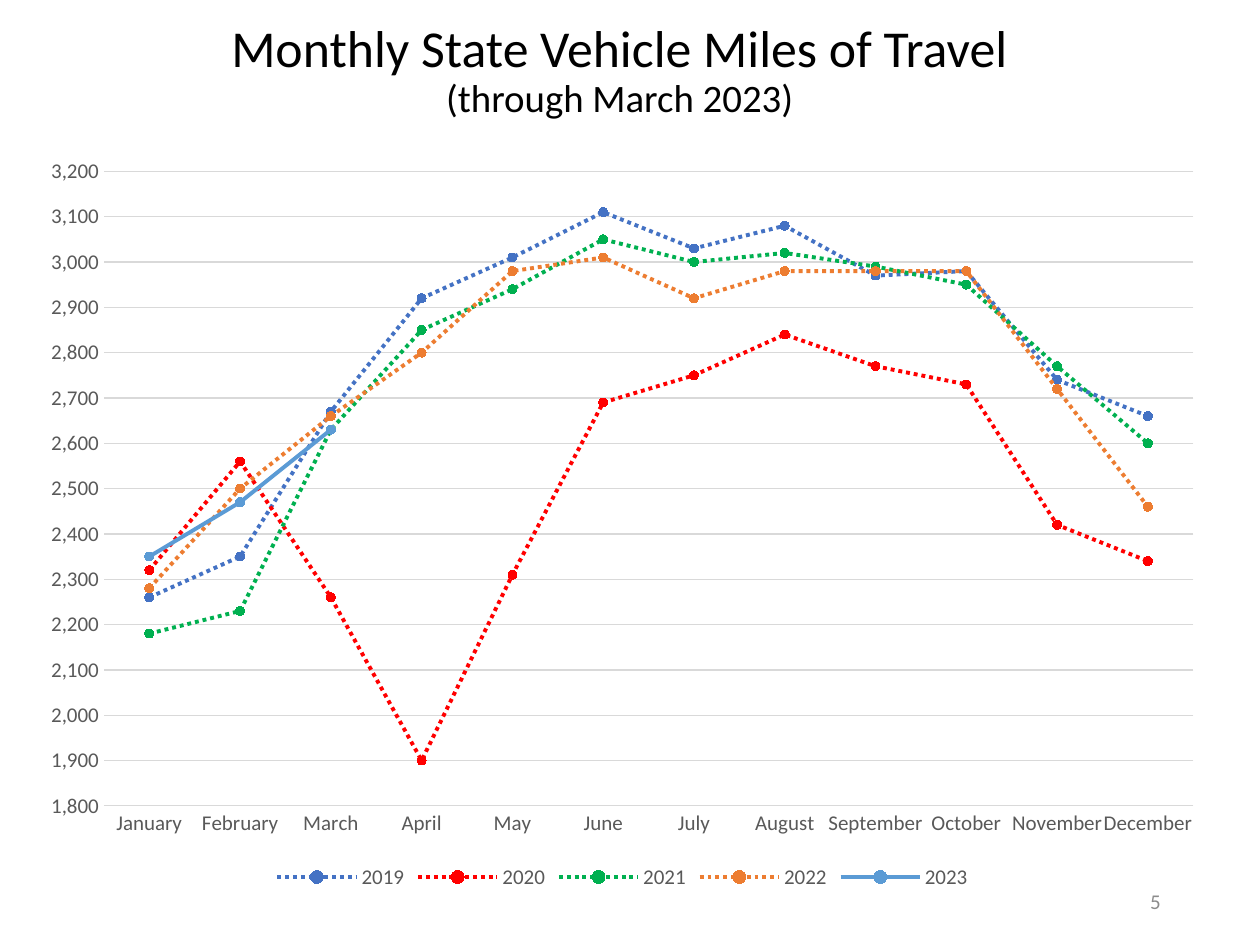
from lxml import etree
from pptx import Presentation
from pptx import util as u
from pptx.chart.data import CategoryChartData
from pptx.dml.color import RGBColor
from pptx.enum import chart as ch, dml, text
from pptx.oxml.ns import qn

FONT = "Calibri"
BLACK = RGBColor(0x00, 0x00, 0x00)
LABEL_GRAY = RGBColor(0x59, 0x59, 0x59)
GRID_GRAY = RGBColor(0xD9, 0xD9, 0xD9)
NUMBER_GRAY = RGBColor(0x8C, 0x8C, 0x8C)
BLUE = RGBColor(0x44, 0x72, 0xC4)
RED = RGBColor(0xFF, 0x00, 0x00)
GREEN = RGBColor(0x00, 0xB0, 0x50)
ORANGE = RGBColor(0xED, 0x7D, 0x31)
LIGHT_BLUE = RGBColor(0x5B, 0x9B, 0xD5)

MONTHS = ["January", "February", "March", "April", "May", "June", "July",
          "August", "September", "October", "November", "December"]
DOTTED = dml.MSO_LINE.ROUND_DOT
YEARS = [
    ("2019", BLUE, DOTTED, [2260, 2350, 2670, 2920, 3010, 3110, 3030, 3080, 2970, 2980, 2740, 2660]),
    ("2020", RED, DOTTED, [2320, 2560, 2260, 1900, 2310, 2690, 2750, 2840, 2770, 2730, 2420, 2340]),
    ("2021", GREEN, DOTTED, [2180, 2230, 2630, 2850, 2940, 3050, 3000, 3020, 2990, 2950, 2770, 2600]),
    ("2022", ORANGE, DOTTED, [2280, 2500, 2660, 2800, 2980, 3010, 2920, 2980, 2980, 2980, 2720, 2460]),
    ("2023", LIGHT_BLUE, None, [2350, 2470, 2630] + [None] * 9),
]
PLOT_AREA = {"layoutTarget": "inner", "xMode": "edge", "yMode": "edge",
             "x": 0.065, "y": 0.037, "w": 0.914, "h": 0.845}


def apply(target, values):
    for name, value in values.items():
        setattr(target, name, value)


def style_font(font, size, color):
    apply(font, {"name": FONT, "size": u.Pt(size)})
    font.color.rgb = color


def style_line(line, color, width, dash=None):
    line.color.rgb = color
    line.width = u.Pt(width)
    if dash is not None:
        line.dash_style = dash


def add_text(slide, box, lines, align, anchor, color, spacing=1.0):
    frame = slide.shapes.add_textbox(*map(u.Inches, box)).text_frame
    apply(frame, {"word_wrap": True, "vertical_anchor": anchor})
    for index, (wording, size) in enumerate(lines):
        paragraph = frame.add_paragraph() if index else frame.paragraphs[0]
        apply(paragraph, {"alignment": align, "line_spacing": spacing})
        run = paragraph.add_run()
        run.text = wording
        style_font(run.font, size, color)


def set_plot_area(chart):
    plot_area = chart.plots[0]._element.getparent()
    for old in plot_area.findall(qn("c:layout")):
        plot_area.remove(old)
    layout = etree.Element(qn("c:layout"))
    manual = etree.SubElement(layout, qn("c:manualLayout"))
    for name, value in PLOT_AREA.items():
        etree.SubElement(manual, qn("c:" + name)).set("val", str(value))
    plot_area.insert(0, layout)


def style_axes(chart):
    months, miles = chart.category_axis, chart.value_axis
    for axis in (months, miles):
        apply(axis, {"major_tick_mark": ch.XL_TICK_MARK.NONE,
                     "minor_tick_mark": ch.XL_TICK_MARK.NONE})
        style_font(axis.tick_labels.font, 12, LABEL_GRAY)
    style_line(months.format.line, GRID_GRAY, 0.75)
    miles.format.line.fill.background()
    apply(miles, {"minimum_scale": 1800, "maximum_scale": 3200,
                  "major_unit": 100, "has_major_gridlines": True})
    style_line(miles.major_gridlines.format.line, GRID_GRAY, 0.75)
    apply(miles.tick_labels, {"number_format": "#,##0",
                              "number_format_is_linked": False})


def style_year(series, color, dash):
    series.smooth = False
    style_line(series.format.line, color, 2.25, dash)
    marker = series.marker
    apply(marker, {"style": ch.XL_MARKER_STYLE.CIRCLE, "size": 5})
    marker.format.fill.solid()
    marker.format.fill.fore_color.rgb = color
    style_line(marker.format.line, color, 0.75)


def add_travel_chart(slide, box):
    data = CategoryChartData(number_format="#,##0")
    data.categories = MONTHS
    for year, _, _, miles in YEARS:
        data.add_series(year, miles)
    chart = slide.shapes.add_chart(
        ch.XL_CHART_TYPE.LINE_MARKERS, *map(u.Inches, box), data).chart
    style_font(chart.font, 10, BLACK)
    apply(chart, {"has_title": False, "has_legend": True})
    apply(chart.legend, {"position": ch.XL_LEGEND_POSITION.BOTTOM,
                         "include_in_layout": False})
    style_font(chart.legend.font, 12, LABEL_GRAY)
    chart.plots[0].vary_by_categories = False
    style_axes(chart)
    for series, (_, color, dash, _) in zip(chart.plots[0].series, YEARS):
        style_year(series, color, dash)
    set_plot_area(chart)


def main():
    deck = Presentation()
    apply(deck, {"slide_width": u.Inches(10), "slide_height": u.Inches(7.5)})
    slide = deck.slides.add_slide(deck.slide_layouts[6])
    add_travel_chart(slide, (0.21, 1.14, 9.46, 5.96))
    add_text(slide, (7.06, 6.95, 2.25, 0.4), [("5", 12)],
             text.PP_ALIGN.RIGHT, text.MSO_ANCHOR.MIDDLE, NUMBER_GRAY)
    add_text(slide, (0.61, 0.08, 8.62, 0.93),
             [("Monthly State Vehicle Miles of Travel", 29.6),
              ("(through March 2023)", 22.2)],
             text.PP_ALIGN.CENTER, text.MSO_ANCHOR.BOTTOM, BLACK, 0.9)
    deck.save("out.pptx")


if __name__ == "__main__":
    main()
